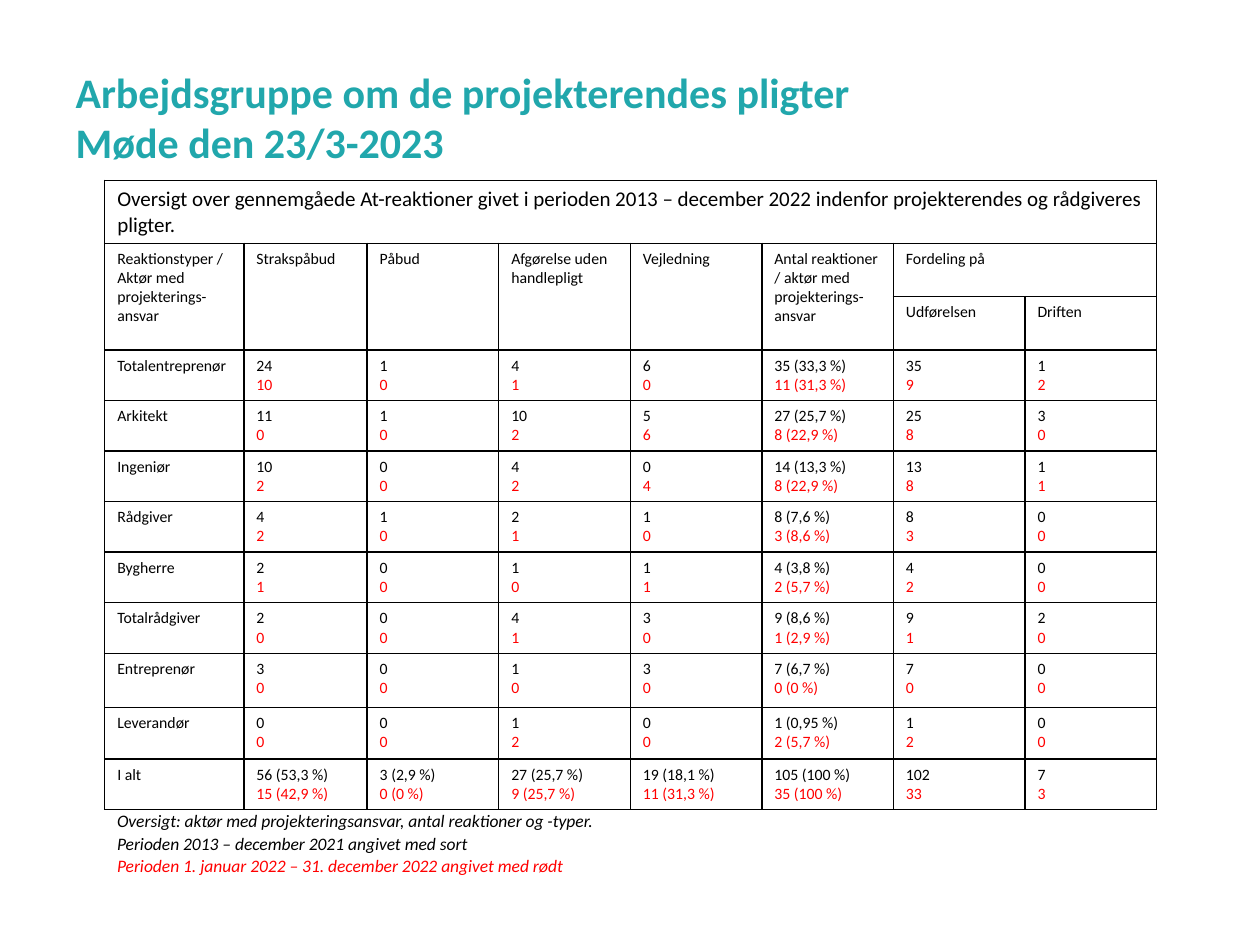
from dataclasses import dataclass

from lxml import etree
from pptx import Presentation
from pptx import util as u
from pptx.dml.color import RGBColor
from pptx.enum import text
from pptx.oxml import ns


@dataclass(frozen=True)
class Theme:
    font: str = "Calibri"
    teal: str = "21A7AC"
    black: str = "000000"
    red: str = "FF0000"
    title_size: float = 24
    heading_size: float = 12
    note_size: float = 10
    cell_size: float = 9
    border_width: float = 1


@dataclass(frozen=True)
class Header:
    row: int
    column: int
    lines: tuple[str, ...]
    rows: int = 1
    columns: int = 1
    size: float = 9


@dataclass(frozen=True)
class Actor:
    name: str
    earlier: tuple[str, ...]
    latest: tuple[str, ...]


THEME = Theme()
COLUMN_WIDTHS = [79.5, 70.5] + [75.2] * 6
ROW_HEIGHTS = [30.5] * 3 + [28.8] + [28.4] * 5 + [31, 29.5, 28.8]
FIRST_ACTOR_ROW = 3

HEADERS = [
    Header(0, 0, ("Oversigt over gennemgåede At-reaktioner givet i perioden 2013 – december 2022 "
                  "indenfor projekterendes og rådgiveres pligter.",),
           columns=8, size=THEME.heading_size),
    Header(1, 0, ("Reaktionstyper /", "Aktør med projekterings-ansvar"), rows=2),
    Header(1, 1, ("Strakspåbud",), rows=2),
    Header(1, 2, ("Påbud",), rows=2),
    Header(1, 3, ("Afgørelse uden handlepligt",), rows=2),
    Header(1, 4, ("Vejledning",), rows=2),
    Header(1, 5, ("Antal reaktioner / aktør med projekterings-ansvar",), rows=2),
    Header(1, 6, ("Fordeling på",), columns=2),
    Header(2, 6, ("Udførelsen",)),
    Header(2, 7, ("Driften",)),
]

ACTORS = [
    Actor("Totalentreprenør", ("24", "1", "4", "6", "35 (33,3 %)", "35", "1"),
          ("10", "0", "1", "0", "11 (31,3 %)", "9", "2")),
    Actor("Arkitekt", ("11", "1", "10", "5", "27 (25,7 %)", "25", "3"),
          ("0", "0", "2", "6", "8 (22,9 %)", "8", "0")),
    Actor("Ingeniør", ("10", "0", "4", "0", "14 (13,3 %)", "13", "1"),
          ("2", "0", "2", "4", "8 (22,9 %)", "8", "1")),
    Actor("Rådgiver", ("4", "1", "2", "1", "8 (7,6 %)", "8", "0"),
          ("2", "0", "1", "0", "3 (8,6 %)", "3", "0")),
    Actor("Bygherre", ("2", "0", "1", "1", "4 (3,8 %)", "4", "0"),
          ("1", "0", "0", "1", "2 (5,7 %)", "2", "0")),
    Actor("Totalrådgiver", ("2", "0", "4", "3", "9 (8,6 %)", "9", "2"),
          ("0", "0", "1", "0", "1 (2,9 %)", "1", "0")),
    Actor("Entreprenør", ("3", "0", "1", "3", "7 (6,7 %)", "7", "0"),
          ("0", "0", "0", "0", "0 (0 %)", "0", "0")),
    Actor("Leverandør", ("0", "0", "1", "0", "1 (0,95 %)", "1", "0"),
          ("0", "0", "2", "0", "2 (5,7 %)", "2", "0")),
    Actor("I alt", ("56 (53,3 %)", "3 (2,9 %)", "27 (25,7 %)", "19 (18,1 %)", "105 (100 %)", "102", "7"),
          ("15 (42,9 %)", "0 (0 %)", "9 (25,7 %)", "11 (31,3 %)", "35 (100 %)", "33", "3")),
]


def add_run(paragraph, wording: str, size: float, color: str, bold: bool = False, italic: bool = False) -> None:
    run = paragraph.add_run()
    run.text = wording
    run.font.name = THEME.font
    run.font.size = u.Pt(size)
    run.font.bold = bold
    run.font.italic = italic
    run.font.color.rgb = RGBColor.from_string(color)


def write_cell(cell, lines: list[tuple[str, str]], size: float = THEME.cell_size) -> None:
    frame = cell.text_frame
    for index, (wording, color) in enumerate(lines):
        paragraph = frame.add_paragraph() if index else frame.paragraphs[0]
        add_run(paragraph, wording, size, color)


def frame_cell(cell) -> None:
    properties = cell._tc.get_or_add_tcPr()
    for side in ("a:lnL", "a:lnR", "a:lnT", "a:lnB"):
        line = etree.SubElement(properties, ns.qn(side), w=str(u.Pt(THEME.border_width)))
        fill = etree.SubElement(line, ns.qn("a:solidFill"))
        etree.SubElement(fill, ns.qn("a:srgbClr"), val=THEME.black)
    cell.fill.background()


def add_title(slide) -> None:
    title = slide.shapes.title
    title.left, title.top, title.width, title.height = u.Pt(36), u.Pt(21.6), u.Pt(648), u.Pt(90)
    title.text_frame.vertical_anchor = text.MSO_ANCHOR.MIDDLE
    paragraph = title.text_frame.paragraphs[0]
    paragraph.alignment = text.PP_ALIGN.LEFT
    add_run(paragraph, "Arbejdsgruppe om de projekterendes pligter ", THEME.title_size, THEME.teal, bold=True)
    paragraph.add_line_break()
    add_run(paragraph, "Møde den 23/3-2023", THEME.title_size, THEME.teal, bold=True)


def add_notes_below_table(slide) -> None:
    box = slide.shapes.add_textbox(u.Pt(59.8), u.Pt(458.6), u.Pt(618.5), u.Pt(67))
    box.text_frame.word_wrap = True
    paragraph = box.text_frame.paragraphs[0]
    paragraph.line_spacing = 1.07
    paragraph.space_after = u.Pt(8)
    for wording in ("Oversigt: aktør med projekteringsansvar, antal reaktioner og -typer.",
                    "Perioden 2013 – december 2021 angivet med sort"):
        add_run(paragraph, wording, THEME.note_size, THEME.black, italic=True)
        paragraph.add_line_break()
    add_run(paragraph, "Perioden 1. januar 2022 – 31. december 2022 angivet med rødt",
            THEME.note_size, THEME.red, italic=True)


def add_reaction_table(slide) -> None:
    shape = slide.shapes.add_table(len(ROW_HEIGHTS), len(COLUMN_WIDTHS), u.Pt(59.8), u.Pt(103),
                                   u.Pt(sum(COLUMN_WIDTHS)), u.Pt(sum(ROW_HEIGHTS)))
    table = shape.table
    table.first_row = False
    table.horz_banding = False
    for column, width in zip(table.columns, COLUMN_WIDTHS):
        column.width = u.Pt(width)
    for row, height in zip(table.rows, ROW_HEIGHTS):
        row.height = u.Pt(height)
    for cell in table.iter_cells():
        frame_cell(cell)
    for header in HEADERS:
        cell = table.cell(header.row, header.column)
        if header.rows * header.columns > 1:
            cell.merge(table.cell(header.row + header.rows - 1, header.column + header.columns - 1))
        write_cell(cell, [(line, THEME.black) for line in header.lines], header.size)
    for row, actor in enumerate(ACTORS, FIRST_ACTOR_ROW):
        write_cell(table.cell(row, 0), [(actor.name, THEME.black)])
        for column, (earlier, latest) in enumerate(zip(actor.earlier, actor.latest), 1):
            write_cell(table.cell(row, column), [(earlier, THEME.black), (latest, THEME.red)])


def main() -> None:
    presentation = Presentation()
    presentation.slide_width = u.Pt(720)
    presentation.slide_height = u.Pt(540)
    slide = presentation.slides.add_slide(presentation.slide_layouts[5])
    add_title(slide)
    add_notes_below_table(slide)
    add_reaction_table(slide)
    presentation.save("out.pptx")


if __name__ == "__main__":
    main()
